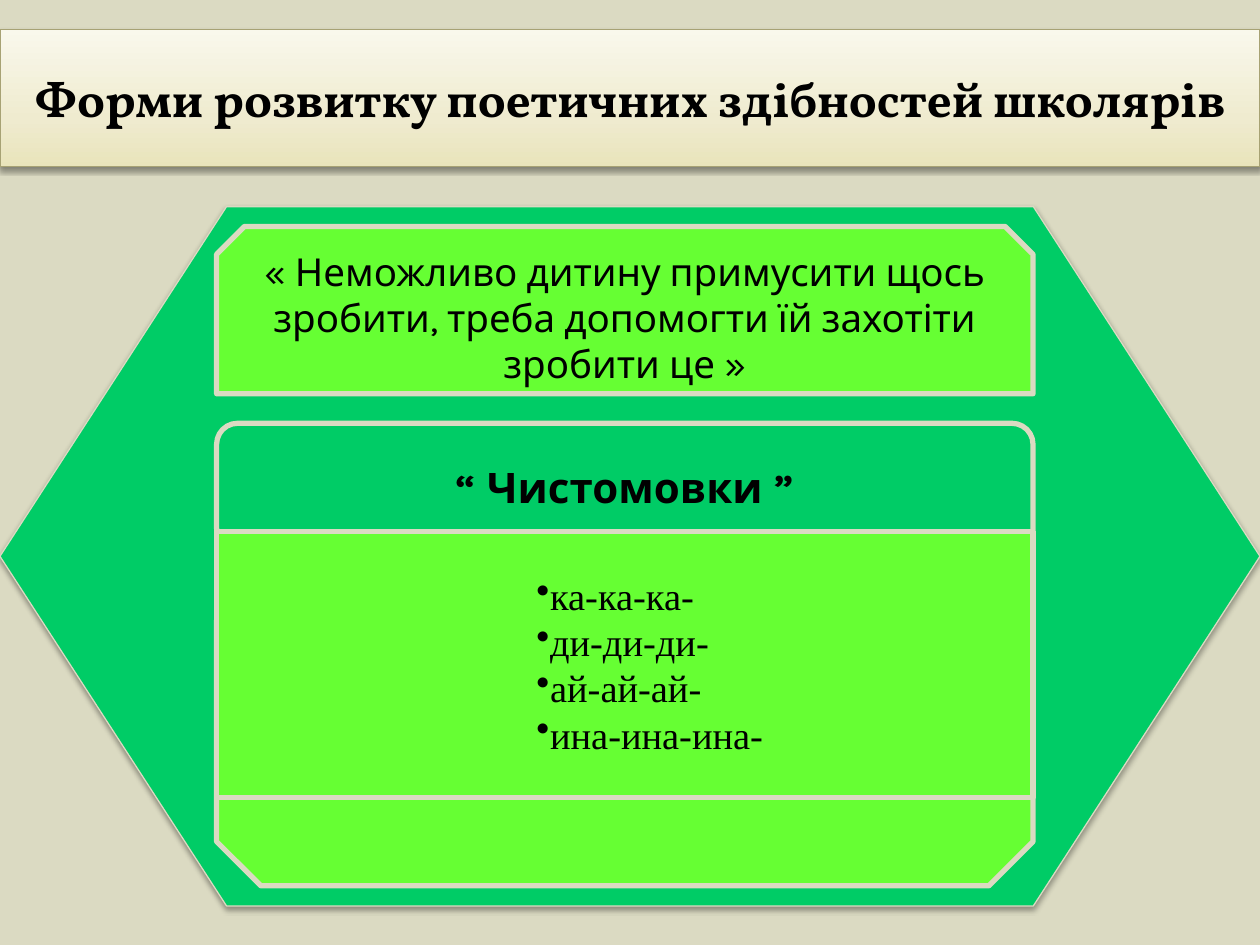
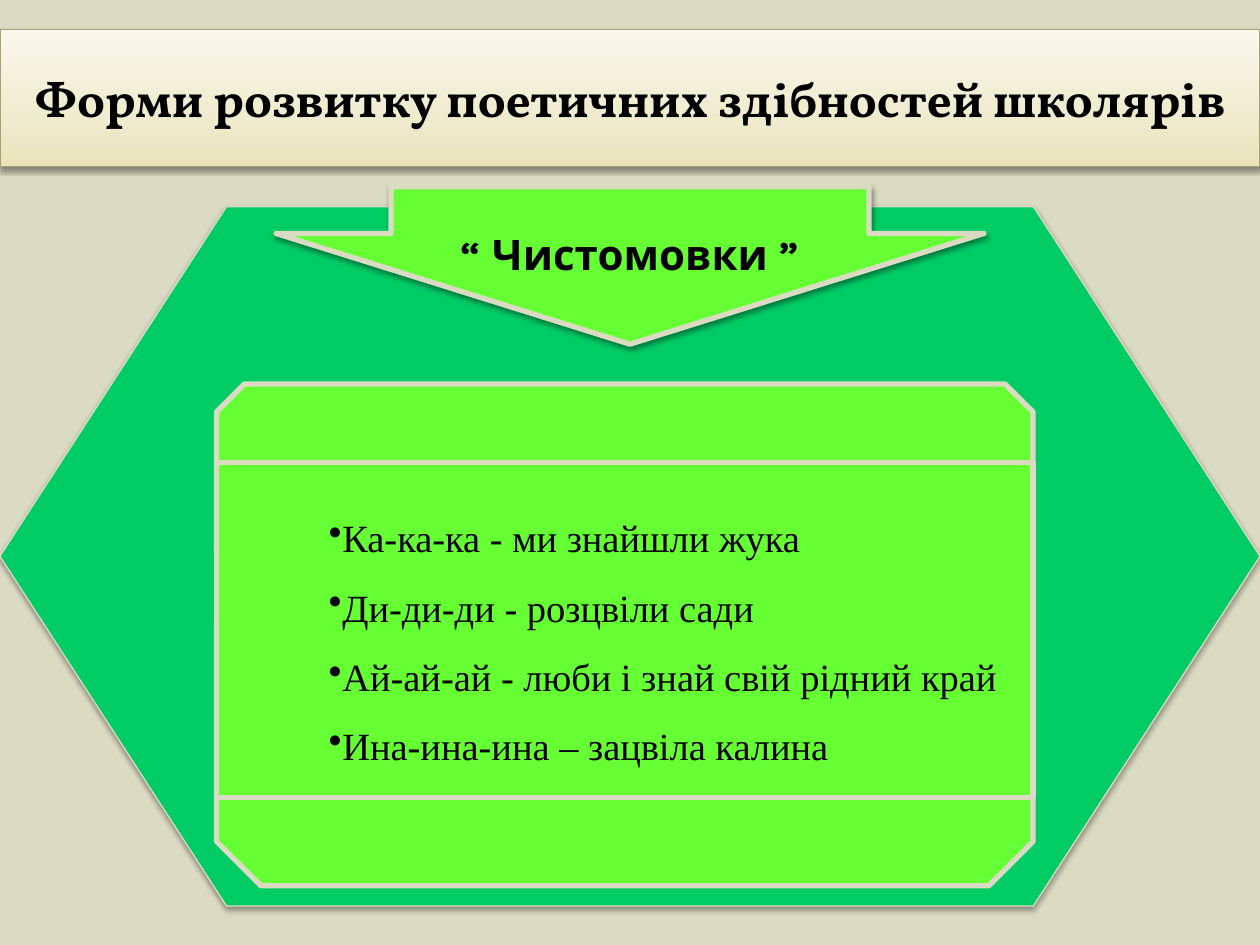
from dataclasses import dataclass
from typing import Optional

from lxml.etree import SubElement
from pptx import Presentation
from pptx.dml.color import RGBColor
from pptx.enum.shapes import MSO_SHAPE as Preset
from pptx.enum.text import MSO_ANCHOR as Anchor, PP_ALIGN as Align
from pptx.oxml.ns import qn
from pptx.util import Pt

COLORS = {
    "sand": "DBDAC2",
    "emerald": "00CC66",
    "lime": "66FF33",
    "olive": "A7A274",
    "ink": "000000",
}
TITLE_GRADIENT = [(0, "E9E4BB"), (35, "EFEBCF"), (100, "F9F8EC")]

TITLE = "Форми розвитку поетичних здібностей школярів"
QUOTE = "« Неможливо дитину примусити щось зробити, треба допомогти їй захотіти зробити це »"
HEADING = "“ Чистомовки ”"
SYLLABLES = ["ка-ка-ка-", "ди-ди-ди-", "ай-ай-ай-", "ина-ина-ина-"]
RHYMES = [
    "Ка-ка-ка - ми знайшли жука",
    "Ди-ди-ди - розцвіли сади",
    "Ай-ай-ай - люби і знай свій рідний край",
    "Ина-ина-ина – зацвіла калина",
]

SLIDE_W, SLIDE_H = 720, 540
PANEL_X, PANEL_W = 123.75, 466.56
PANEL_BOTTOM = 455.7
SNIP_H = 95.6


@dataclass(frozen=True)
class Block:
    preset: Preset
    x: float
    y: float
    w: float
    h: float
    fill: Optional[str] = "lime"
    line: str = "sand"
    line_width: float = 3
    shadow_alpha: int = 0
    shadow_distance: float = 1.6
    rotation: float = 0
    adjustments: tuple = ()


def panel(preset: Preset, y: float, h: float, **options) -> Block:
    return Block(preset, PANEL_X, y, PANEL_W, h, **options)


# Elements shared by both slides
HEXAGON = Block(Preset.HEXAGON, 0, 118.1, SLIDE_W, 399.6, fill="emerald", line_width=0.75,
                shadow_alpha=35, shadow_distance=1.8, adjustments=(0.324,))
TITLE_BAND = Block(Preset.RECTANGLE, 0, 16.87, SLIDE_W, 78.5, fill=None, line="olive",
                   line_width=0.75, shadow_alpha=38)
LOWER_SNIP = panel(Preset.SNIP_2_SAME_RECTANGLE, 354.2, 152, rotation=180)


def rgb(name: str) -> RGBColor:
    return RGBColor.from_string(COLORS[name])


def add_shadow(shape, alpha: int, distance: float) -> None:
    effects = shape.element.spPr.find(qn("a:effectLst"))
    shadow = SubElement(effects, qn("a:outerShdw"), blurRad=str(Pt(3.1)),
                        dist=str(Pt(distance)), dir="5400000", rotWithShape="0")
    color = SubElement(shadow, qn("a:srgbClr"), val=COLORS["ink"])
    SubElement(color, qn("a:alpha"), val=str(alpha * 1000))


def fill_gradient(shape) -> None:
    shape.fill.gradient()
    shape.fill.gradient_angle = 90
    stops = shape.element.spPr.find(qn("a:gradFill")).find(qn("a:gsLst"))
    for stop in list(stops):
        stops.remove(stop)
    for position, color in TITLE_GRADIENT:
        stop = SubElement(stops, qn("a:gs"), pos=str(position * 1000))
        SubElement(stop, qn("a:srgbClr"), val=color)


def draw(slide, block: Block):
    shape = slide.shapes.add_shape(block.preset, Pt(block.x), Pt(block.y),
                                   Pt(block.w), Pt(block.h))
    shape.rotation = block.rotation
    for index, value in enumerate(block.adjustments):
        shape.adjustments[index] = value
    if block.fill:
        shape.fill.solid()
        shape.fill.fore_color.rgb = rgb(block.fill)
    else:
        fill_gradient(shape)
    shape.line.color.rgb = rgb(block.line)
    shape.line.width = Pt(block.line_width)
    shape.shadow.inherit = False
    if block.shadow_alpha:
        add_shadow(shape, block.shadow_alpha, block.shadow_distance)
    return shape


def write(shape, *lines: str, font: str = "Karla", size: float = 22, bold: bool = False,
          bullet_indent: Optional[tuple] = None, spacing: float = 1,
          top_inset: Optional[float] = None) -> None:
    """Fill a shape with centred lines, or with bullets at (margin, first-line indent)."""
    frame = shape.text_frame
    frame.word_wrap = True
    frame.vertical_anchor = Anchor.MIDDLE
    if top_inset is not None:
        frame.vertical_anchor = Anchor.TOP
        frame.margin_top, frame.margin_bottom = Pt(top_inset), Pt(0)
    for index, line in enumerate(lines):
        paragraph = frame.paragraphs[0] if index == 0 else frame.add_paragraph()
        paragraph.alignment = Align.LEFT if bullet_indent else Align.CENTER
        paragraph.line_spacing = spacing
        if bullet_indent:
            margin, indent = bullet_indent
            properties = paragraph._p.get_or_add_pPr()
            properties.set("marL", str(Pt(margin)))
            properties.set("indent", str(Pt(indent)))
            SubElement(properties, qn("a:buChar"), char="•")
        run = paragraph.add_run()
        run.text = line
        run.font.name, run.font.size, run.font.bold = font, Pt(size), bold
        run.font.color.rgb = rgb("ink")


def add_base_slide(deck):
    slide = deck.slides.add_slide(deck.slide_layouts[6])
    slide.background.fill.solid()
    slide.background.fill.fore_color.rgb = rgb("sand")
    draw(slide, HEXAGON)
    write(draw(slide, TITLE_BAND), TITLE, font="Vollkorn", size=28, bold=True)
    return slide


def add_verses(slide, verses: list, top: float, **text_format) -> None:
    """Draw the lower snipped panel and the verse panel that covers its upper part."""
    draw(slide, LOWER_SNIP)
    verse_panel = draw(slide, panel(Preset.RECTANGLE, top, PANEL_BOTTOM - top))
    write(verse_panel, *verses, font="Times New Roman", **text_format)


def build_syllables_slide(deck) -> None:
    slide = add_base_slide(deck)
    write(draw(slide, panel(Preset.SNIP_2_SAME_RECTANGLE, 129.4, SNIP_H)), QUOTE)
    heading = draw(slide, panel(Preset.ROUNDED_RECTANGLE, 241.9, 72, fill="emerald"))
    write(heading, HEADING, size=24, bold=True)
    add_verses(slide, SYLLABLES, 303.6, bullet_indent=(148.3, 27.4))


def build_rhymes_slide(deck) -> None:
    slide = add_base_slide(deck)
    draw(slide, panel(Preset.SNIP_2_SAME_RECTANGLE, 219.4, SNIP_H))
    add_verses(slide, RHYMES, 264.2, bullet_indent=(28.5, 28.5), spacing=1.5)
    arrow = Block(Preset.DOWN_ARROW, 157.7, 106.7, 404.6, 90, shadow_alpha=38,
                  adjustments=(0.675, 0.703))
    write(draw(slide, arrow), HEADING, size=24, bold=True, top_inset=24)


def main() -> None:
    deck = Presentation()
    deck.slide_width, deck.slide_height = Pt(SLIDE_W), Pt(SLIDE_H)
    build_syllables_slide(deck)
    build_rhymes_slide(deck)
    deck.save("out.pptx")


if __name__ == "__main__":
    main()
